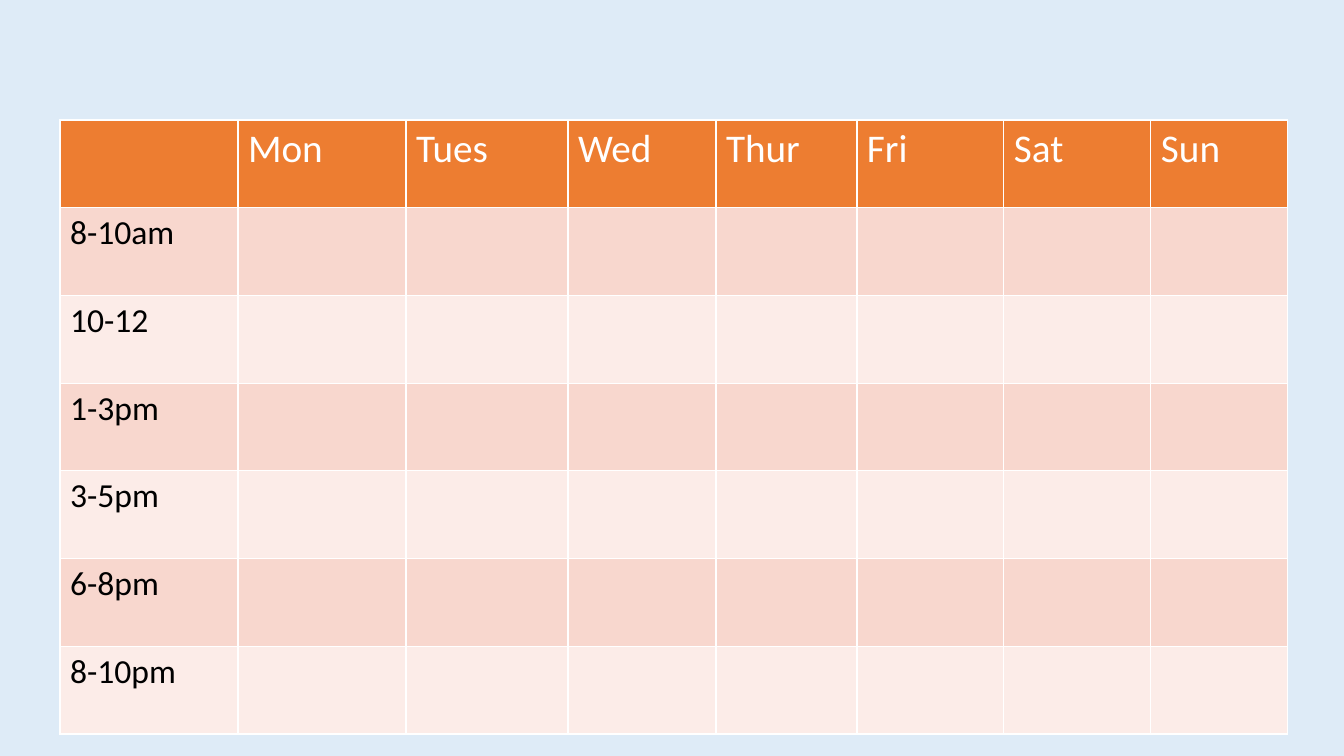
import pptx
import pptx.dml.color
import pptx.oxml
import pptx.oxml.ns
import pptx.util

DAYS = ["Mon", "Tues", "Wed", "Thur", "Fri", "Sat", "Sun"]
TIMES = ["8-10am", "10-12", "1-3pm", "3-5pm", "6-8pm", "8-10pm"]

COLORS = {
    "page": "DEEBF7",
    "header": "ED7D31",
    "odd_row": "F8D7CE",
    "even_row": "FCECE8",
    "line": "FFFFFF",
    "header_text": "FFFFFF",
    "time_text": "000000",
}
FONT = "Calibri"
PAGE_WIDTH, PAGE_HEIGHT = 1344, 756
TABLE_LEFT, TABLE_TOP, TABLE_HEIGHT = 60, 120, 614
COLUMN_WIDTHS = [178, 168, 162, 148, 141, 147, 147, 137]
EMU_PER_PX = 914400 / 100.8


def px(length):
    return pptx.util.Emu(round(length * EMU_PER_PX))


def rgb(name):
    return pptx.dml.color.RGBColor.from_string(COLORS[name])


def add_borders(cell):
    """Draw a 1 pt line on each side; lines must precede the fill in tcPr."""
    properties = cell._tc.get_or_add_tcPr()
    for position, side in enumerate(("lnL", "lnR", "lnT", "lnB")):
        line = pptx.oxml.parse_xml(
            f'<a:{side} {pptx.oxml.ns.nsdecls("a")} w="{pptx.util.Pt(1)}">'
            f'<a:solidFill><a:srgbClr val="{COLORS["line"]}"/></a:solidFill>'
            f'</a:{side}>'
        )
        properties.insert(position, line)


def style_cell(cell, text, fill, text_color, size):
    cell.fill.solid()
    cell.fill.fore_color.rgb = rgb(fill)
    add_borders(cell)
    cell.text = text
    font = cell.text_frame.paragraphs[0].font
    font.name = FONT
    font.size = pptx.util.Pt(size)
    font.bold = False
    font.color.rgb = rgb(text_color)


def add_timetable(page):
    rows = [["", *DAYS]] + [[time] + [""] * len(DAYS) for time in TIMES]
    table = page.shapes.add_table(
        len(rows), len(COLUMN_WIDTHS), px(TABLE_LEFT), px(TABLE_TOP),
        px(sum(COLUMN_WIDTHS)), px(TABLE_HEIGHT),
    ).table
    for column, width in zip(table.columns, COLUMN_WIDTHS):
        column.width = px(width)
    for row_index, texts in enumerate(rows):
        table.rows[row_index].height = px(TABLE_HEIGHT / len(rows))
        if row_index == 0:
            look = ("header", "header_text", 28)
        else:
            look = ("odd_row" if row_index % 2 else "even_row", "time_text", 24)
        for column_index, text in enumerate(texts):
            style_cell(table.cell(row_index, column_index), text, *look)


def main():
    deck = pptx.Presentation()
    deck.slide_width, deck.slide_height = px(PAGE_WIDTH), px(PAGE_HEIGHT)
    page = deck.slides.add_slide(deck.slide_layouts[6])
    page.background.fill.solid()
    page.background.fill.fore_color.rgb = rgb("page")
    add_timetable(page)
    deck.save("out.pptx")


if __name__ == "__main__":
    main()
